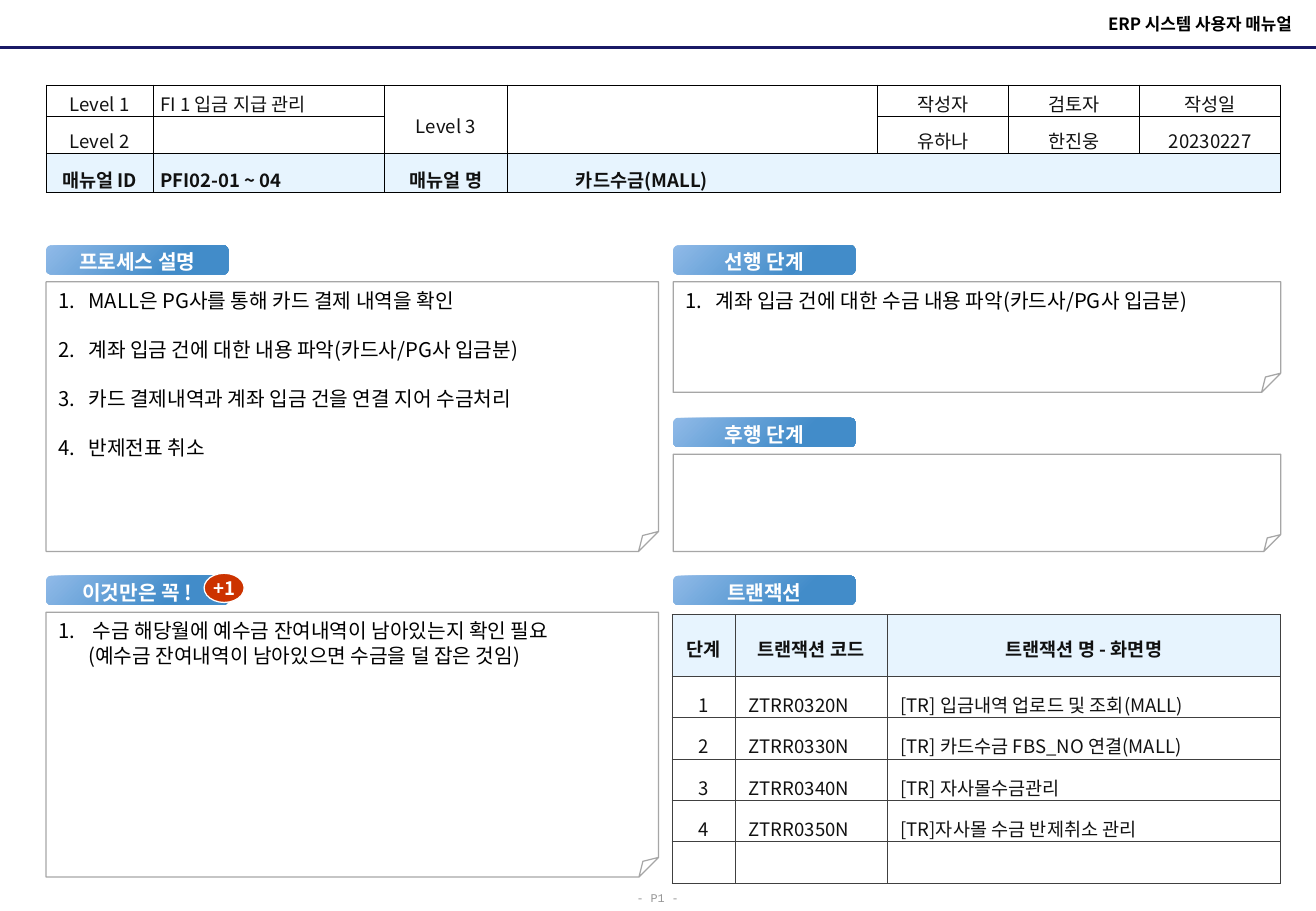
from dataclasses import dataclass

import pptx
import pptx.dml.color
import pptx.enum.shapes
import pptx.enum.text
import pptx.oxml.ns
import pptx.util
from lxml import etree
from pptx.util import Inches

MSO = pptx.enum.shapes.MSO_SHAPE
ALIGN = pptx.enum.text.PP_ALIGN
ANCHOR = pptx.enum.text.MSO_ANCHOR
qn = pptx.oxml.ns.qn

FONT = "Noto Sans CJK KR"
COLORS = {
    "black": "000000", "ink": "111111", "white": "FFFFFF", "navy": "191966",
    "gray": "A6A6A6", "footer": "969696", "border": "404040", "head": "E7F4FE",
    "pill_start": "90BAE8", "pill_end": "428CC9", "badge": "CC3300",
}


@dataclass
class Section:
    title: str
    left: float
    top: float


@dataclass
class Note:
    left: float
    top: float
    width: float
    height: float
    fold: int
    items: list[str]


@dataclass
class Grid:
    left: float
    top: float
    cols: list[float]
    rows: list[float]
    border: str
    side: float
    texts: list[list[str]]
    head_row: int
    left_cols: list[int]


SECTIONS = [
    Section("프로세스 설명", 0.38, 2.02),
    Section("선행 단계", 5.54, 2.02),
    Section("후행 단계", 5.54, 3.44),
    Section("이것만은 꼭 !", 0.38, 4.74),
    Section("트랜잭션", 5.54, 4.74),
]
NOTES = [
    Note(0.38, 2.32, 5.04, 2.22, 7400, [
        "MALL은 PG사를 통해 카드 결제 내역을 확인",
        "계좌 입금 건에 대한 내용 파악(카드사/PG사 입금분)",
        "카드 결제내역과 계좌 입금 건을 연결 지어 수금처리",
        "반제전표 취소",
    ]),
    Note(5.54, 2.32, 5, 0.91, 17300, ["계좌 입금 건에 대한 수금 내용 파악(카드사/PG사 입금분)"]),
    Note(5.54, 3.74, 5, 0.8, 17300, []),
    Note(0.38, 5.04, 5.04, 2.18, 7400, [
        " 수금 해당월에 예수금 잔여내역이 남아있는지 확인 필요\v"
        "(예수금 잔여내역이 남아있으면 수금을 덜 잡은 것임)",
    ]),
]
MANUAL = Grid(
    0.38, 0.7, [0.88, 1.9, 1.02, 3.04, 1.08, 1.08, 1.16], [0.26, 0.26, 0.32], "black", 0.06,
    [
        ["Level 1", "FI 1 입금 지급 관리", "Level 3", "", "작성자", "검토자", "작성일"],
        ["Level 2", "", "", "", "유하나", "한진웅", "20230227"],
        ["매뉴얼 ID", "PFI02-01 ~ 04", "매뉴얼 명", "카드수금(MALL)", "", "", ""],
    ], 2, [1, 3])
TRANSACTIONS = Grid(
    5.53, 5.06, [0.52, 1.25, 3.24], [0.51] + [0.34] * 5, "border", 0.11,
    [
        ["단계", "트랜잭션 코드", "트랜잭션 명 - 화면명"],
        ["1", "ZTRR0320N", "[TR] 입금내역 업로드 및 조회(MALL)"],
        ["2", "ZTRR0330N", "[TR] 카드수금 FBS_NO 연결(MALL)"],
        ["3", "ZTRR0340N", "[TR] 자사몰수금관리"],
        ["4", "ZTRR0350N", "[TR]자사몰 수금 반제취소 관리"],
        ["", "", ""],
    ], 0, [1, 2])


def rgb(name: str) -> pptx.dml.color.RGBColor:
    return pptx.dml.color.RGBColor.from_string(COLORS[name])


def format_paragraph(p, size: float, color: str, bold: bool = False,
                     align=ALIGN.LEFT, font: str = FONT) -> None:
    p.alignment = align
    for r in p.runs:
        r.font.size = pptx.util.Pt(size)
        r.font.bold = bold
        r.font.color.rgb = rgb(color)
        r.font.name = font
        etree.SubElement(r._r.get_or_add_rPr(), qn("a:ea"), typeface=font)


def add_shape(s, kind, left: float, top: float, width: float, height: float):
    sp = s.shapes.add_shape(kind, Inches(left), Inches(top), Inches(width), Inches(height))
    sp.shadow.inherit = False
    return sp


def add_section(s, section: Section) -> None:
    sp = add_shape(s, MSO.ROUNDED_RECTANGLE, section.left, section.top, 1.5, 0.24)
    sp.fill.gradient()
    sp.fill.gradient_angle = 315
    for stop, color, position in zip(sp.fill.gradient_stops, ("pill_start", "pill_end"), (0, 0.7)):
        stop.color.rgb = rgb(color)
        stop.position = position
    sp.line.fill.background()
    tf = sp.text_frame
    tf.margin_left = tf.margin_right = tf.margin_bottom = 0
    tf.margin_top = Inches(0.03)
    tf.vertical_anchor = ANCHOR.MIDDLE
    tf.text = section.title
    format_paragraph(tf.paragraphs[0], 12, "white", True, ALIGN.CENTER)


def add_note(s, note: Note) -> None:
    sp = add_shape(s, MSO.FOLDED_CORNER, note.left, note.top, note.width, note.height)
    adjusts = next(sp._element.iter(qn("a:avLst")))
    adjusts[:] = []
    etree.SubElement(adjusts, qn("a:gd"), name="adj", fmla=f"val {note.fold}")
    sp.fill.background()
    sp.line.color.rgb = rgb("gray")
    sp.line.width = pptx.util.Pt(0.75)
    tf = sp.text_frame
    tf.vertical_anchor = ANCHOR.TOP
    for i, item in enumerate(note.items):
        p = tf.add_paragraph() if i else tf.paragraphs[0]
        p.text = item
        p.line_spacing = pptx.util.Pt(14.6)
        if i:
            p.space_before = pptx.util.Pt(14.4)
        pPr = p._p.get_or_add_pPr()
        pPr.set("marL", str(Inches(0.25)))
        pPr.set("indent", str(-Inches(0.25)))
        etree.SubElement(pPr, qn("a:buFont"), typeface="+mj-lt")
        etree.SubElement(pPr, qn("a:buAutoNum"), type="arabicPeriod")
        format_paragraph(p, 12, "black")


def add_borders(cell, color: str) -> None:
    tcPr = cell._tc.get_or_add_tcPr()
    for side in ("lnL", "lnR", "lnT", "lnB"):
        ln = etree.SubElement(tcPr, qn(f"a:{side}"), w=str(pptx.util.Pt(0.5)))
        fill = etree.SubElement(ln, qn("a:solidFill"))
        etree.SubElement(fill, qn("a:srgbClr"), val=COLORS[color])


def add_grid(s, grid: Grid):
    table = s.shapes.add_table(
        len(grid.rows), len(grid.cols), Inches(grid.left), Inches(grid.top),
        Inches(sum(grid.cols)), Inches(sum(grid.rows))).table
    table.first_row = table.horz_banding = False
    for column, width in zip(table.columns, grid.cols):
        column.width = Inches(width)
    for row, height in zip(table.rows, grid.rows):
        row.height = Inches(height)
    for i, texts in enumerate(grid.texts):
        for j, text in enumerate(texts):
            cell = table.cell(i, j)
            is_head = i == grid.head_row
            add_borders(cell, grid.border)
            cell.fill.solid()
            cell.fill.fore_color.rgb = rgb("head" if is_head else "white")
            cell.margin_left = cell.margin_right = Inches(grid.side)
            cell.margin_top = cell.margin_bottom = 0
            cell.vertical_anchor = ANCHOR.BOTTOM
            p = cell.text_frame.paragraphs[0]
            if text:
                p.text = text
                centred = j not in grid.left_cols or (is_head and i == 0)
                format_paragraph(p, 11, "ink", is_head, ALIGN.CENTER if centred else ALIGN.LEFT)
            else:
                etree.SubElement(p._p, qn("a:endParaRPr"), sz="1100")
    return table


def add_header_line(s) -> None:
    line = s.shapes.add_connector(
        pptx.enum.shapes.MSO_CONNECTOR.STRAIGHT, 0, Inches(0.39), Inches(10.83), Inches(0.39))
    line.line.color.rgb = rgb("navy")
    line.line.width = pptx.util.Pt(1.5)
    etree.SubElement(line._element.spPr, qn("a:effectLst"))


def add_title(s) -> None:
    title = s.shapes.title
    title.left, title.top = Inches(6.04), Inches(0.06)
    title.width, title.height = Inches(4.69), Inches(0.27)
    tf = title.text_frame
    tf.text = "ERP 시스템 사용자 매뉴얼"
    tf.vertical_anchor = ANCHOR.MIDDLE
    format_paragraph(tf.paragraphs[0], 10, "black", True, ALIGN.RIGHT)


def add_page_number(s) -> None:
    tf = s.shapes.add_textbox(Inches(5.14), Inches(7.25), Inches(0.56), Inches(0.25)).text_frame
    tf.text = "- P1 -"
    tf.paragraphs[0].line_spacing = 1.3
    format_paragraph(tf.paragraphs[0], 7, "footer", font="Courier New")


def add_badge(s) -> None:
    sp = add_shape(s, MSO.OVAL, 1.68, 4.72, 0.33, 0.24)
    sp.fill.solid()
    sp.fill.fore_color.rgb = rgb("badge")
    sp.line.color.rgb = rgb("white")
    sp.line.width = pptx.util.Pt(0.75)
    tf = sp.text_frame
    tf.word_wrap = False
    tf.vertical_anchor = ANCHOR.MIDDLE
    tf.text = "+1"
    format_paragraph(tf.paragraphs[0], 11, "white", True, ALIGN.CENTER)


def main() -> None:
    prs = pptx.Presentation()
    prs.slide_width, prs.slide_height = Inches(10.83), Inches(7.5)
    s = prs.slides.add_slide(prs.slide_layouts[5])
    add_title(s)
    add_page_number(s)
    add_header_line(s)
    manual = add_grid(s, MANUAL)
    for column in (2, 3):
        manual.cell(0, column).merge(manual.cell(1, column))
    manual.cell(2, 3).merge(manual.cell(2, 6))
    manual.cell(0, 2).margin_bottom = Inches(0.12)
    manual.cell(2, 3).margin_left = Inches(0.56)
    transactions = add_grid(s, TRANSACTIONS)
    for cell in transactions.rows[0].cells:
        cell.margin_bottom = Inches(0.12)
    for section in SECTIONS:
        add_section(s, section)
    for note in NOTES:
        add_note(s, note)
    add_badge(s)
    prs.save("out.pptx")


if __name__ == "__main__":
    main()
